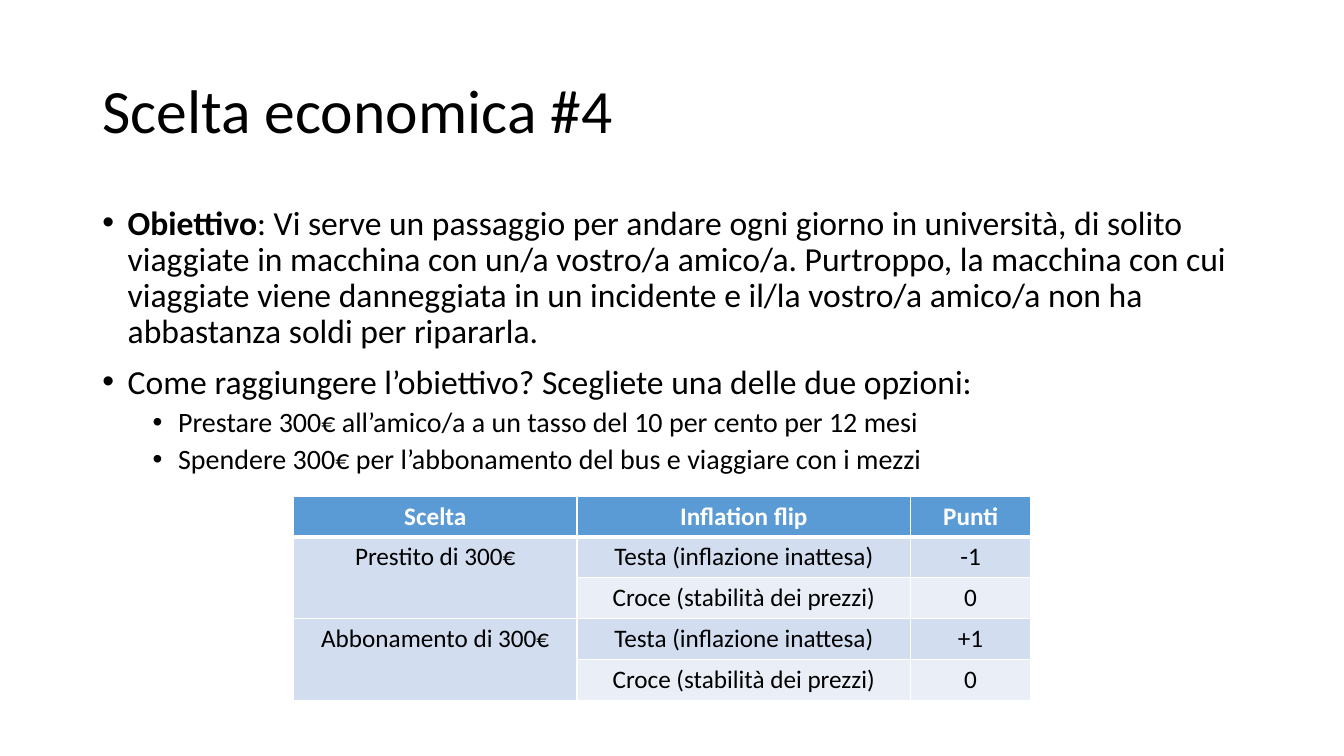
from pptx import Presentation
from pptx.dml.color import RGBColor as RGB
from pptx.enum.text import MSO_ANCHOR as ANCHOR, PP_ALIGN as ALIGN
from pptx.oxml.ns import qn
from pptx.util import Cm, Pt
from lxml import etree

COLORS = {"text": "000000", "white": "FFFFFF", "header": "5B9BD5",
          "dark_band": "D2DEEF", "light_band": "EAEFF7"}


def add_run(p, text, size, color="text", bold=False):
    r = p.add_run()
    r.text = text
    for name, value in {"name": "Calibri", "size": Pt(size), "bold": bold}.items():
        setattr(r.font, name, value)
    r.font.color.rgb = RGB.from_string(COLORS[color])


def add_border(cell, side, width):
    ln = etree.Element(qn(f"a:{side}"), w=str(Pt(width)))
    fill = etree.SubElement(ln, qn("a:solidFill"))
    etree.SubElement(fill, qn("a:srgbClr"), val=COLORS["white"])
    return ln


prs = Presentation()
prs.slide_width, prs.slide_height = Cm(33.87), Cm(19.05)
slide = prs.slides.add_slide(prs.slide_layouts[5])

# Title
title = slide.shapes.title
title.left, title.top, title.width, title.height = Cm(2.33), Cm(1.01), Cm(29.21), Cm(3.68)
tf = title.text_frame
tf.vertical_anchor = ANCHOR.MIDDLE
p = tf.paragraphs[0]
p.alignment, p.line_spacing = ALIGN.LEFT, 0.9
add_run(p, "Scelta economica #4", 44)

# Bullets: level and (text, bold) runs
bullets = [
    (0, [("Obiettivo", True),
         (": Vi serve un passaggio per andare ogni giorno in università, di solito "
          "viaggiate in macchina con un/a vostro/a amico/a. Purtroppo, la macchina con cui "
          "viaggiate viene danneggiata in un incidente e il/la vostro/a amico/a non ha "
          "abbastanza soldi per ripararla.", False)]),
    (0, [("Come raggiungere l’obiettivo? Scegliete una delle due opzioni:", False)]),
    (1, [("Prestare 300€ all’amico/a a un tasso del 10 per cento per 12 mesi", False)]),
    (1, [("Spendere 300€ per l’abbonamento del bus e viaggiare con i mezzi", False)]),
]
tf = slide.shapes.add_textbox(Cm(2.33), Cm(5.07), Cm(29.21), Cm(12.09)).text_frame
tf.word_wrap = True
for i, (level, runs) in enumerate(bullets):
    p = tf.add_paragraph() if i else tf.paragraphs[0]
    p.level, p.line_spacing, p.space_before = level, 0.9, Pt(5 if level else 10)
    pPr = p._p.get_or_add_pPr()
    pPr.set("marL", str(Cm(0.64 + 1.27 * level)))
    pPr.set("indent", str(-Cm(0.64)))
    etree.SubElement(pPr, qn("a:buFont"), typeface="Arial")
    etree.SubElement(pPr, qn("a:buChar"), char="•")
    for text, bold in runs:
        add_run(p, text, 20 if level else 24, bold=bold)

# Table of points
rows = [
    ("Scelta", "Inflation flip", "Punti"),
    ("Prestito di 300€", "Testa (inflazione inattesa)", "-1"),
    ("", "Croce (stabilità dei prezzi)", "0"),
    ("Abbonamento di 300€", "Testa (inflazione inattesa)", "+1"),
    ("", "Croce (stabilità dei prezzi)", "0"),
]
table = slide.shapes.add_table(len(rows), 3, Cm(7.4), Cm(12.5), Cm(18.57), Cm(5.15)).table
for col, width in zip(table.columns, (7.14, 8.41, 3.02)):
    col.width = Cm(width)
for i, row in enumerate(rows):
    table.rows[i].height = Cm(1.03)
    fill = "header" if i == 0 else "dark_band" if i % 2 else "light_band"
    for j, text in enumerate(row):
        cell = table.cell(i, j)
        p = cell.text_frame.paragraphs[0]
        p.alignment = ALIGN.CENTER
        if text:
            add_run(p, text, 18, "text" if i else "white", bold=i == 0)
        # Borders come before the fill in the cell properties
        tcPr = cell._tc.get_or_add_tcPr()
        widths = {"lnL": 1, "lnR": 1, "lnT": 3 if i == 1 else 1, "lnB": 1 if i else 3}
        for side, width in widths.items():
            tcPr.append(add_border(cell, side, width))
        cell.fill.solid()
        cell.fill.fore_color.rgb = RGB.from_string(COLORS[fill])

# Each choice spans its two outcomes
for i in (1, 3):
    table.cell(i, 0).merge(table.cell(i + 1, 0))

prs.save("out.pptx")
